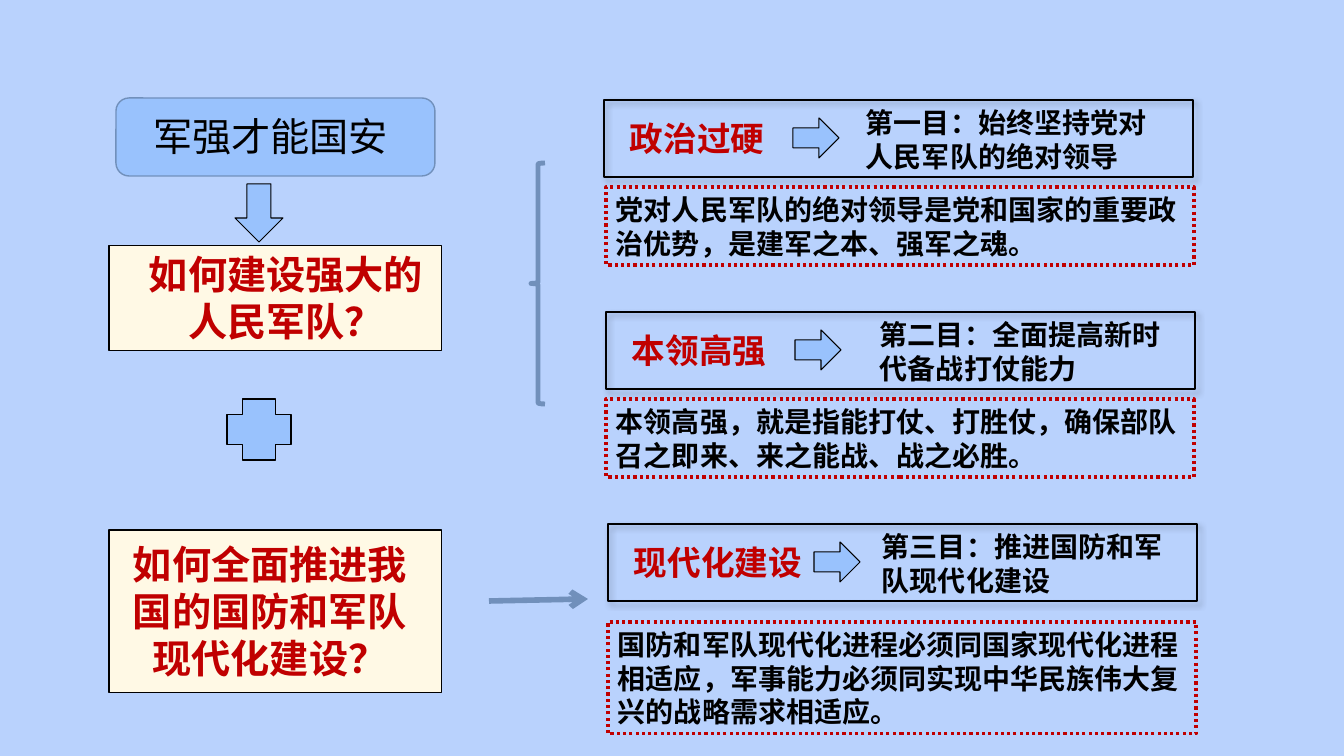
from pptx import Presentation
from pptx.dml.color import RGBColor
from pptx.enum.dml import MSO_LINE
from pptx.enum.shapes import MSO_CONNECTOR, MSO_SHAPE as SHAPE
from pptx.enum.text import MSO_ANCHOR, PP_ALIGN
from pptx.oxml import parse_xml
from pptx.oxml.ns import nsdecls, qn
from pptx.util import Pt

COLORS = {"back": "B9D2FD", "blue": "99C2FD", "steel": "7190BB",
          "cream": "FFF9E5", "red": "C00000", "black": "000000"}
HAN = "Noto Sans CJK SC"
PX = 914400 / 100.8

TITLE = "军强才能国安"
QUESTIONS = [
    ((109, 246, 333, 105), (138, 245, 296, 105), ["如何建设强大的", "人民军队？"]),
    ((109, 530, 333, 163), (119, 535, 302, 152), ["如何全面推进我国的国防和军队现代化建设？"]),
]
GOALS = [
    {"at": (604, 100), "label": "政治过硬", "arrow_dx": 189, "topic_dx": 252,
     "topic": "第一目：始终坚持党对人民军队的绝对领导",
     "note": "党对人民军队的绝对领导是党和国家的重要政治优势，是建军之本、强军之魂。",
     "note_at": (606, 187, 588, 78)},
    {"at": (606, 312), "label": "本领高强", "arrow_dx": 189, "topic_dx": 264,
     "topic": "第二目：全面提高新时代备战打仗能力",
     "note": "本领高强，就是指能打仗、打胜仗，确保部队召之即来、来之能战、战之必胜。",
     "note_at": (606, 399, 588, 78)},
    {"at": (608, 524), "label": "现代化建设", "arrow_dx": 206, "topic_dx": 264,
     "topic": "第三目：推进国防和军队现代化建设",
     "note": "国防和军队现代化进程必须同国家现代化进程相适应，军事能力必须同实现中华民族伟大复兴的战略需求相适应。",
     "note_at": (608, 622, 588, 112)},
]


def emu(*lengths):
    return [round(length * PX) for length in lengths]


def color(name):
    return RGBColor.from_string(COLORS[name])


def draw(kind, at, fill=None, line="black", width=0.75):
    shape = slide.shapes.add_shape(kind, *emu(*at))
    shape.shadow.inherit = False
    if fill:
        shape.fill.solid()
        shape.fill.fore_color.rgb = color(fill)
    else:
        shape.fill.background()
    shape.line.color.rgb = color(line)
    shape.line.width = Pt(width)
    return shape


def write(shape, paragraphs, size, ink="black", bold=True, align=PP_ALIGN.LEFT, face=HAN):
    frame = shape.text_frame
    frame.word_wrap = True
    frame.vertical_anchor = MSO_ANCHOR.MIDDLE
    for index, text in enumerate(paragraphs):
        paragraph = frame.add_paragraph() if index else frame.paragraphs[0]
        paragraph.alignment = align
        paragraph.line_spacing = Pt(size * 1.2)
        run = paragraph.add_run()
        run.text = text
        run.font.size = Pt(size)
        run.font.bold = bold
        run.font.name = face
        run.font.color.rgb = color(ink)
        run.font._element.find(qn("a:latin")).addnext(
            parse_xml(f'<a:ea {nsdecls("a")} typeface="{HAN}"/>'))


def label(at, *args, **options):
    write(slide.shapes.add_textbox(*emu(*at)), *args, **options)


def cast_shadow(shape):
    shape._element.spPr.find(qn("a:effectLst")).append(parse_xml(
        f'<a:outerShdw {nsdecls("a")} blurRad="{Pt(4)}" dist="{Pt(3)}" dir="2700000" '
        f'algn="tl" rotWithShape="0"><a:srgbClr val="{COLORS["black"]}">'
        '<a:alpha val="40000"/></a:srgbClr></a:outerShdw>'))


deck = Presentation()
deck.slide_width, deck.slide_height = emu(1344, 756)
slide = deck.slides.add_slide(deck.slide_layouts[6])
slide.background.fill.solid()
slide.background.fill.fore_color.rgb = color("back")

draw(SHAPE.ROUNDED_RECTANGLE, (116, 98, 319, 78), "blue", "steel", 1)
label((116, 107, 309, 57), [TITLE], 28, bold=False, align=PP_ALIGN.CENTER)
draw(SHAPE.DOWN_ARROW, (235, 184, 48, 58), "blue")
draw(SHAPE.CROSS, (227, 399, 64, 61), "blue")

for card, text_at, question in QUESTIONS:
    draw(SHAPE.RECTANGLE, card, "cream")
    label(text_at, question, 28, "red", align=PP_ALIGN.CENTER)

for goal in GOALS:
    left, top = goal["at"]
    cast_shadow(draw(SHAPE.RECTANGLE, (left, top, 589, 77), width=1))
    label((left + 16, top + 13, 196, 50), [goal["label"]], 24, "red")
    draw(SHAPE.RIGHT_ARROW, (left + goal["arrow_dx"], top + 18, 46, 40), "blue")
    label((left + goal["topic_dx"], top, 325, 78), [goal["topic"]], 20, face="Arial")
    note = draw(SHAPE.RECTANGLE, goal["note_at"], line="red", width=2.25)
    note.line.dash_style = MSO_LINE.ROUND_DOT
    write(note, [goal["note"]], 20, face="Arial")

draw(SHAPE.LEFT_BRACE, (531, 163, 14, 241), line="steel", width=3.5)

pointer = slide.shapes.add_connector(MSO_CONNECTOR.STRAIGHT, *emu(489, 601, 588, 599))
pointer.line.color.rgb = color("steel")
pointer.line.width = Pt(4)
pointer.line._get_or_add_ln().append(parse_xml(f'<a:tailEnd {nsdecls("a")} type="arrow"/>'))
pointer._element.spPr.append(parse_xml(f'<a:effectLst {nsdecls("a")}/>'))

deck.save("out.pptx")
